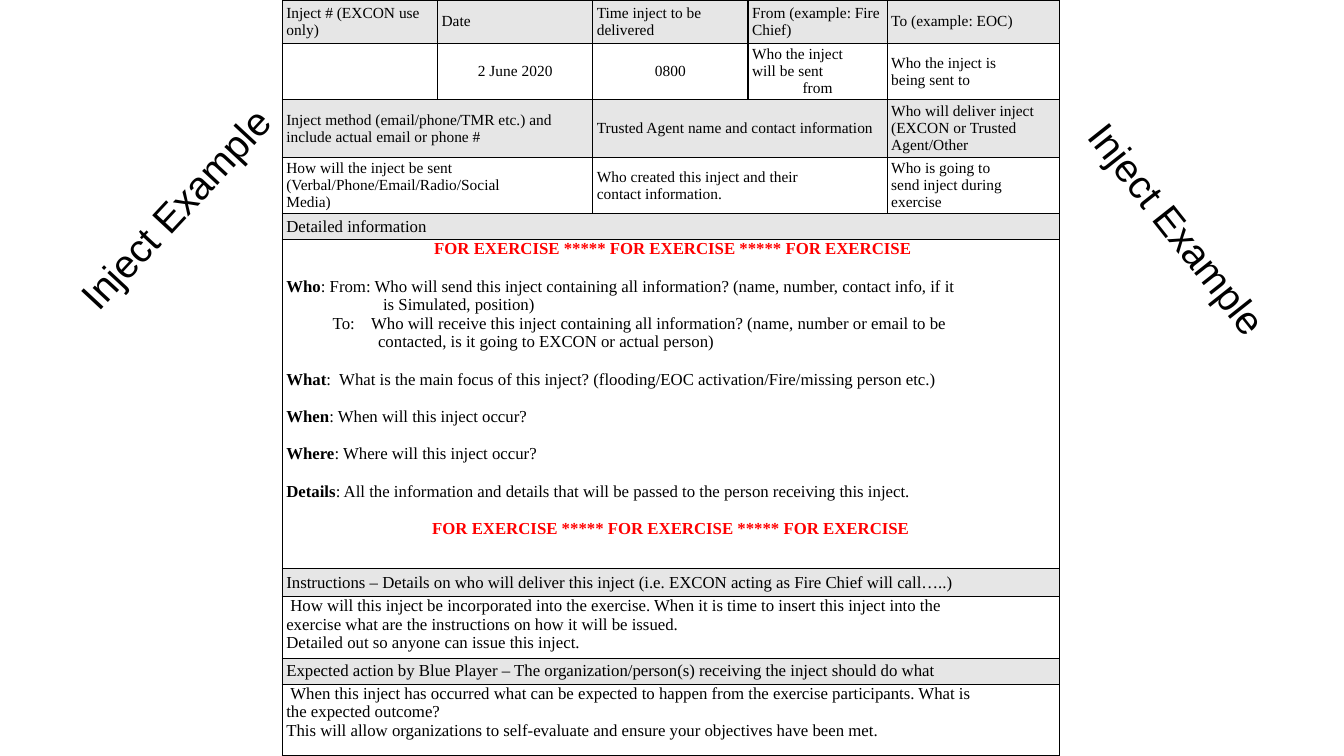
from dataclasses import dataclass

from lxml.etree import SubElement
from pptx import Presentation
from pptx.dml.color import RGBColor
from pptx.enum.text import MSO_ANCHOR as Anchor, PP_ALIGN as Align
from pptx.oxml.ns import qn
from pptx.util import Pt

EMU_PER_PX = 9144
COLOURS = {"ink": "000000", "alert": "FF0000", "heading": "E6E6E6"}
COLUMN_WIDTHS = [154, 154, 154, 138, 171]
ROW_HEIGHTS = [43, 56, 57, 56, 26, 326, 28, 61, 26, 71]
EXERCISE_BANNER = "FOR EXERCISE ***** FOR EXERCISE ***** FOR EXERCISE"


@dataclass(frozen=True)
class Line:
    text: str
    lead: str = ""
    colour: str = "ink"
    bold: bool = False
    centred: bool = False
    left: int = 0
    first: int = 0
    gap: float = 0


@dataclass(frozen=True)
class Entry:
    row: int
    column: int
    lines: list[Line]
    span: int = 1
    heading: bool = False
    size: int = 11
    anchor: Anchor = Anchor.MIDDLE


@dataclass(frozen=True)
class SideLabel:
    left: int
    top: int
    rotation: float


def px(length: int) -> int:
    return length * EMU_PER_PX


def rgb(name: str) -> RGBColor:
    return RGBColor.from_string(COLOURS[name])


def heading(row: int, column: int, text: str, span: int = 1, size: int = 11) -> Entry:
    return Entry(row, column, [Line(text)], span, True, size)


def section(row: int, text: str) -> Entry:
    return heading(row, 0, text, 5, 12)


def answer(row: int, column: int, *texts: str, span: int = 1) -> Entry:
    return Entry(row, column, [Line(text) for text in texts], span)


def body(row: int, *lines: Line) -> Entry:
    return Entry(row, 0, list(lines), 5, size=12, anchor=Anchor.TOP)


def question(lead: str, text: str) -> Line:
    return Line(text, lead=lead, gap=13.3)


def banner(left: int = 0, gap: float = 0) -> Line:
    return Line(EXERCISE_BANNER, colour="alert", bold=True, centred=True, left=left, gap=gap)


ENTRIES = [
    heading(0, 0, "Inject # (EXCON use only)"),
    heading(0, 1, "Date"),
    heading(0, 2, "Time inject to be delivered"),
    heading(0, 3, "From (example: Fire Chief)"),
    heading(0, 4, "To (example: EOC)"),
    Entry(1, 1, [Line("2 June 2020", centred=True)]),
    Entry(1, 2, [Line("0800", centred=True)]),
    Entry(1, 3, [Line("Who the inject"), Line("will be sent"), Line("from", centred=True)]),
    answer(1, 4, "Who the inject is", "being sent to"),
    heading(2, 0, "Inject method (email/phone/TMR etc.) and include actual email or phone #", 2),
    heading(2, 2, "Trusted Agent name and contact information", 2),
    heading(2, 4, "Who will deliver inject (EXCON or Trusted Agent/Other"),
    answer(3, 0, "How will the inject be sent", "(Verbal/Phone/Email/Radio/Social", "Media)", span=2),
    answer(3, 2, "Who created this inject and their", "contact information.", span=2),
    answer(3, 4, "Who is going to", "send inject during", "exercise"),
    section(4, "Detailed information"),
    body(
        5,
        banner(left=4),
        question("Who", ": From: Who will send this inject containing all information? "
                 "(name, number, contact info, if it"),
        Line("is Simulated, position)", left=96),
        Line("To:\tWho will receive this inject containing all information? "
             "(name, number or email to be", left=84, first=-38),
        Line("contacted, is it going to EXCON or actual person)", left=91),
        question("What", ":  What is the main focus of this inject? "
                 "(flooding/EOC activation/Fire/missing person etc.)"),
        question("When", ": When will this inject occur?"),
        question("Where", ": Where will this inject occur?"),
        question("Details", ": All the information and details that will be passed "
                 "to the person receiving this inject."),
        banner(gap=13.3),
    ),
    section(6, "Instructions – Details on who will deliver this inject "
            "(i.e. EXCON acting as Fire Chief will call…..)"),
    body(
        7,
        Line("How will this inject be incorporated into the exercise. "
             "When it is time to insert this inject into the", left=4),
        Line("exercise what are the instructions on how it will be issued."),
        Line("Detailed out so anyone can issue this inject."),
    ),
    section(8, "Expected action by Blue Player – "
            "The organization/person(s) receiving the inject should do what"),
    body(
        9,
        Line("When this inject has occurred what can be expected to happen "
             "from the exercise participants. What is", left=4),
        Line("the expected outcome?"),
        Line("This will allow organizations to self-evaluate "
             "and ensure your objectives have been met."),
    ),
]


def style_run(run, font: str, size: int, colour: str, bold: bool) -> None:
    run.font.name = font
    run.font.size = Pt(size)
    run.font.bold = bold
    run.font.color.rgb = rgb(colour)


def write_line(paragraph, line: Line, size: int) -> None:
    paragraph.text = line.lead or line.text
    if line.lead:
        paragraph.add_run().text = line.text
    for position, run in enumerate(paragraph.runs):
        is_lead = bool(line.lead) and position == 0
        style_run(run, "Times New Roman", size, line.colour, line.bold or is_lead)
    paragraph.alignment = Align.CENTER if line.centred else Align.LEFT
    if line.gap:
        paragraph.space_before = Pt(line.gap)
    if line.left:
        properties = paragraph._p.get_or_add_pPr()
        properties.set("marL", str(px(line.left)))
        properties.set("indent", str(px(line.first)))


def frame_cell(cell) -> None:
    cell.margin_left = cell.margin_right = px(4)
    cell.margin_top = cell.margin_bottom = 0
    for side in ("lnL", "lnR", "lnT", "lnB"):
        border = SubElement(cell._tc.get_or_add_tcPr(), qn(f"a:{side}"), w=str(Pt(1)))
        ink = SubElement(border, qn("a:solidFill"))
        SubElement(ink, qn("a:srgbClr"), val=COLOURS["ink"])
    cell.fill.background()


def write_entry(form, entry: Entry) -> None:
    cell = form.cell(entry.row, entry.column)
    if entry.span > 1:
        cell.merge(form.cell(entry.row, entry.column + entry.span - 1))
    cell.vertical_anchor = entry.anchor
    if entry.heading:
        cell.fill.solid()
        cell.fill.fore_color.rgb = rgb("heading")
    for position, line in enumerate(entry.lines):
        frame = cell.text_frame
        write_line(frame.add_paragraph() if position else frame.paragraphs[0], line, entry.size)


def draw_form(slide) -> None:
    form = slide.shapes.add_table(
        len(ROW_HEIGHTS), len(COLUMN_WIDTHS), px(280), 0,
        px(sum(COLUMN_WIDTHS)), px(sum(ROW_HEIGHTS))).table
    form.first_row = form.horz_banding = False
    for column, width in zip(form.columns, COLUMN_WIDTHS):
        column.width = px(width)
    for row, height in zip(form.rows, ROW_HEIGHTS):
        row.height = px(height)
    for cell in form.iter_cells():
        frame_cell(cell)
    for entry in ENTRIES:
        write_entry(form, entry)


def place_label(shape, label: SideLabel) -> None:
    shape.left, shape.top = px(label.left), px(label.top)
    shape.width, shape.height = px(308), px(57)
    shape.rotation = label.rotation
    frame = shape.text_frame
    frame.text = "Inject Example"
    frame.word_wrap = True
    frame.vertical_anchor = Anchor.MIDDLE
    frame.paragraphs[0].alignment = Align.CENTER
    style_run(frame.paragraphs[0].runs[0], "Arial", 28, "ink", False)


def main() -> None:
    deck = Presentation()
    deck.slide_width, deck.slide_height = px(1333), px(750)
    slide = deck.slides.add_slide(deck.slide_layouts[5])
    place_label(slide.shapes.title, SideLabel(19, 178, 312.8))
    place_label(slide.shapes.add_textbox(0, 0, 0, 0), SideLabel(1014, 198, 51.7))
    draw_form(slide)
    deck.save("out.pptx")


if __name__ == "__main__":
    main()
